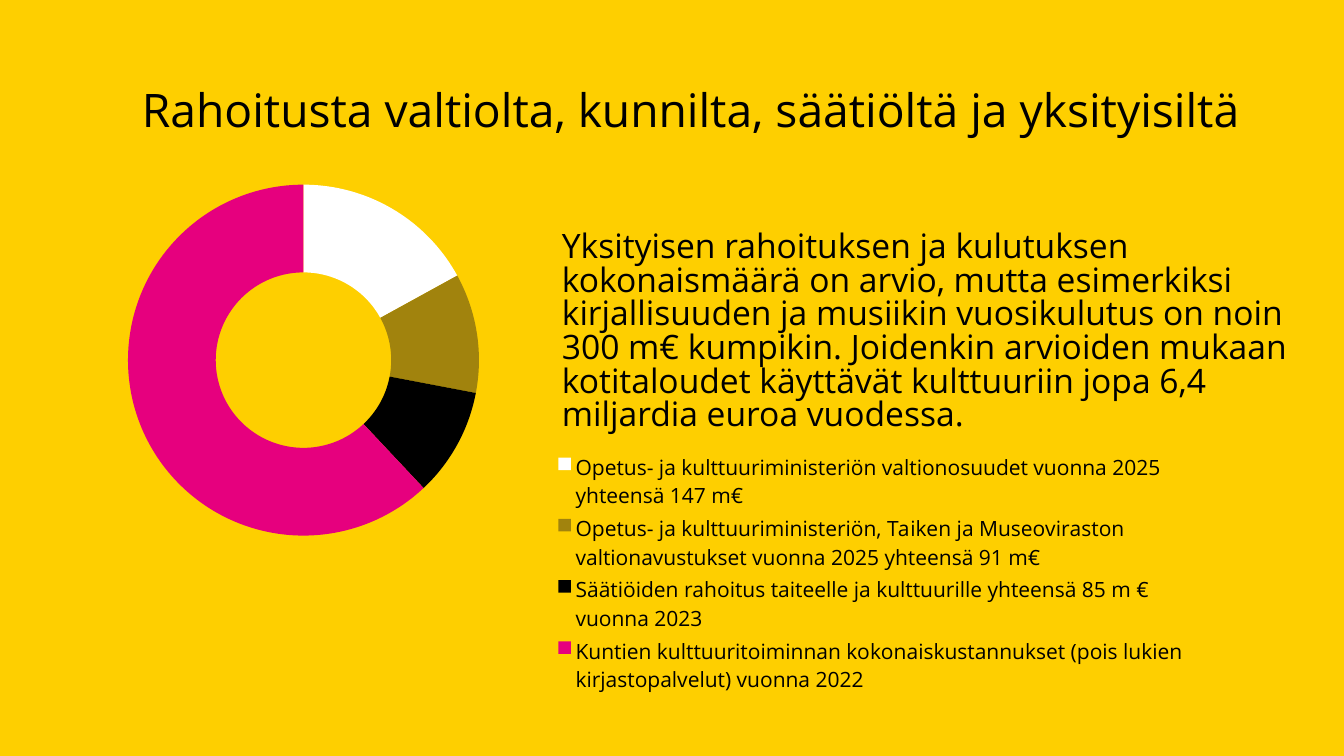
from lxml.etree import SubElement
from pptx import Presentation
from pptx.chart.data import CategoryChartData
from pptx.dml.color import RGBColor
from pptx.enum.chart import XL_CHART_TYPE, XL_LEGEND_POSITION
from pptx.enum.text import MSO_ANCHOR
from pptx.oxml.ns import qn
from pptx.util import Pt

EMU_PER_PX = 914400 / 100.8
FONT = "Open Sans"
COLOURS = {
    "background": "FECF00",
    "text": "000000",
    "state_shares": "FFFFFF",
    "state_grants": "A1830D",
    "foundations": "000000",
    "municipalities": "E6007E",
}
HEADING = "Rahoitusta valtiolta, kunnilta, säätiöltä ja yksityisiltä"
PRIVATE_FUNDING = (
    "Yksityisen rahoituksen ja kulutuksen kokonaismäärä on arvio, mutta "
    "esimerkiksi kirjallisuuden ja musiikin vuosikulutus on noin 300 m€ "
    "kumpikin. Joidenkin arvioiden mukaan kotitaloudet käyttävät kulttuuriin "
    "jopa 6,4 miljardia euroa vuodessa."
)
FUNDING = [
    ("state_shares", 17,
     "Opetus- ja kulttuuriministeriön valtionosuudet vuonna 2025 yhteensä 147 m€"),
    ("state_grants", 11,
     "Opetus- ja kulttuuriministeriön, Taiken ja Museoviraston "
     "valtionavustukset vuonna 2025 yhteensä 91 m€"),
    ("foundations", 10,
     "Säätiöiden rahoitus taiteelle ja kulttuurille yhteensä 85 m € vuonna 2023"),
    ("municipalities", 62,
     "Kuntien kulttuuritoiminnan kokonaiskustannukset (pois lukien "
     "kirjastopalvelut) vuonna 2022"),
]


def px(length):
    return round(length * EMU_PER_PX)


def colour(name):
    return RGBColor.from_string(COLOURS[name])


def style_font(font, size, face=FONT):
    font.name = face
    font.size = Pt(size)
    font.color.rgb = colour("text")


def add_text(slide, text, box, size, line_spacing):
    frame = slide.shapes.add_textbox(*map(px, box)).text_frame
    frame.word_wrap = True
    frame.vertical_anchor = MSO_ANCHOR.MIDDLE
    frame.text = text
    paragraph = frame.paragraphs[0]
    paragraph.line_spacing = line_spacing
    style_font(paragraph.runs[0].font, size)


def set_layout(parent, position, fractions, inner=False):
    for old_layout in parent.findall(qn("c:layout")):
        parent.remove(old_layout)
    layout = SubElement(parent, qn("c:layout"))
    parent.insert(position, layout)
    manual = SubElement(layout, qn("c:manualLayout"))
    settings = [("layoutTarget", "inner")] if inner else []
    settings += [("xMode", "edge"), ("yMode", "edge")]
    settings += zip("xywh", fractions)
    for tag, value in settings:
        SubElement(manual, qn(f"c:{tag}")).set("val", str(value))


def add_funding_doughnut(slide, box):
    funding_data = CategoryChartData()
    funding_data.categories = [label for _, _, label in FUNDING]
    funding_data.add_series("Series 1", [share for _, share, _ in FUNDING])
    chart = slide.shapes.add_chart(
        XL_CHART_TYPE.DOUGHNUT, *map(px, box), funding_data
    ).chart
    chart.has_title = False
    style_font(chart.font, 10, "Karla")

    doughnut = chart.plots[0]
    doughnut.vary_by_categories = True
    for index, (source, _, _) in enumerate(FUNDING):
        sector = doughnut.series[0].points[index].format
        sector.fill.solid()
        sector.fill.fore_color.rgb = colour(source)
        sector.line.fill.background()

    chart.has_legend = True
    legend = chart.legend
    legend.position = XL_LEGEND_POSITION.BOTTOM
    legend.include_in_layout = False
    style_font(legend.font, 15)

    chart_xml = chart.element.find(qn("c:chart"))
    plot_area = chart_xml.find(qn("c:plotArea"))
    plot_area.find(f".//{qn('c:holeSize')}").set("val", "75")
    set_layout(plot_area, 0, (0, 0.13, 0.3, 0.59), inner=True)
    set_layout(chart_xml.find(qn("c:legend")), 1, (0.36, 0.56, 0.55, 0.38))


def main():
    deck = Presentation()
    deck.slide_width, deck.slide_height = px(1344), px(756)
    slide = deck.slides.add_slide(deck.slide_layouts[6])
    slide.background.fill.solid()
    slide.background.fill.fore_color.rgb = colour("background")
    add_text(slide, HEADING, (132, 40, 1170, 146), 33, 0.9)
    add_text(slide, PRIVATE_FUNDING, (552, 152, 751, 361), 24, Pt(24))
    add_funding_doughnut(slide, (128, 81, 1170, 657))
    deck.save("out.pptx")


if __name__ == "__main__":
    main()
